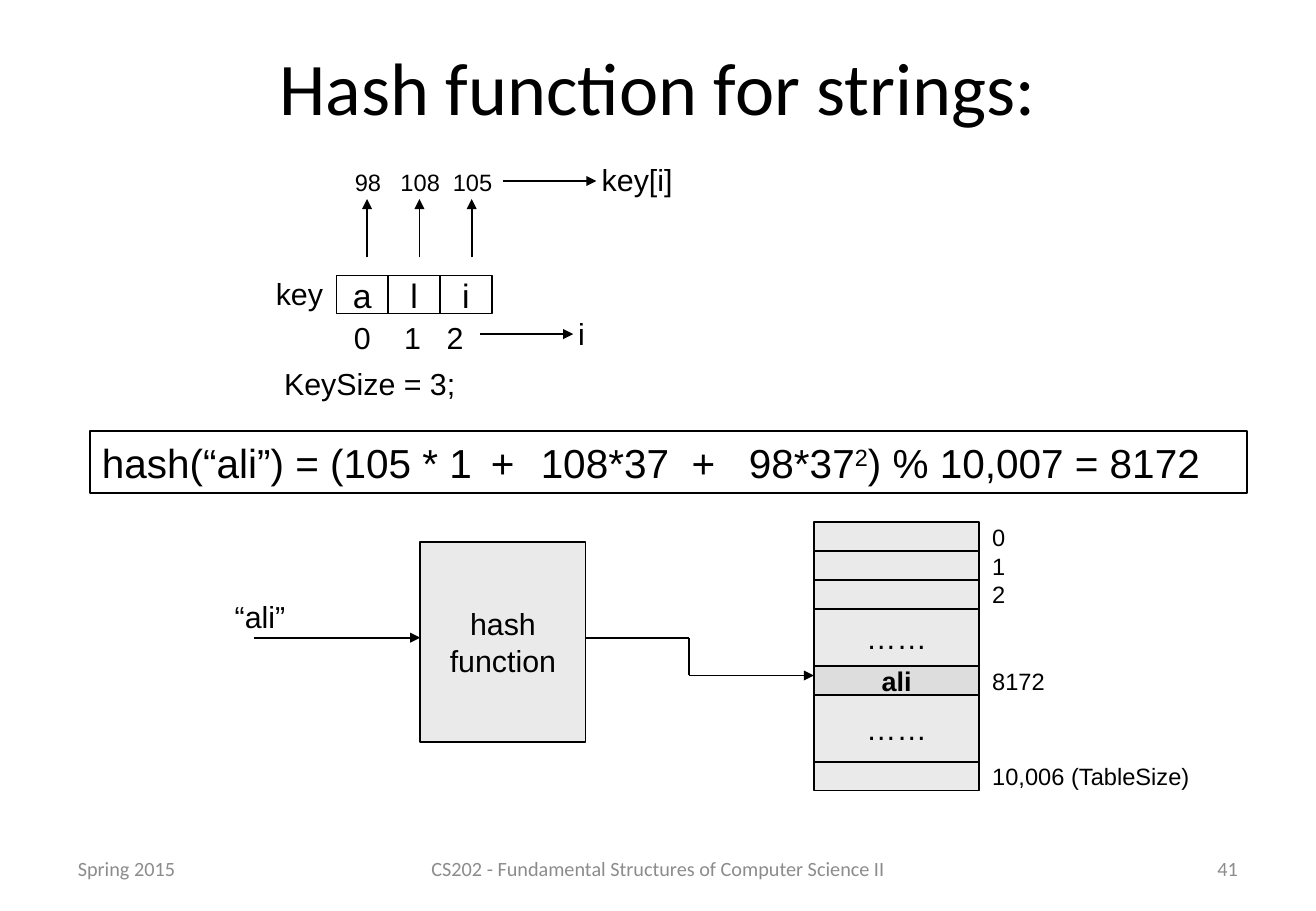
from lxml import etree
from pptx import Presentation
from pptx.dml.color import RGBColor
from pptx.enum.shapes import MSO_CONNECTOR, MSO_SHAPE
from pptx.enum.text import MSO_ANCHOR, PP_ALIGN
from pptx.oxml.ns import qn
from pptx.util import Pt

COLORS = {"ink": "000000", "muted": "8C8C8C", "cell": "EAEAEA", "match": "DDDDDD"}


class SlideBuilder:
    def __init__(self, slide, body_font="Arial", heading_font="Calibri"):
        self.slide = slide
        self.body_font = body_font
        self.heading_font = heading_font

    def color(self, name):
        return RGBColor.from_string(COLORS[name])

    def style_text(self, shape, size, font=None, color="ink", align=PP_ALIGN.CENTER,
                   bold=False, wrap=False):
        frame = shape.text_frame
        frame.word_wrap = wrap
        frame.vertical_anchor = MSO_ANCHOR.MIDDLE
        for paragraph in frame.paragraphs:
            paragraph.alignment = align
            for run in paragraph.runs:
                run.font.name = font or self.body_font
                run.font.size = Pt(size)
                run.font.bold = bold
                run.font.color.rgb = self.color(color)

    def title(self, text, left, top, width, height):
        shape = self.slide.shapes.title
        shape.left, shape.top, shape.width, shape.height = map(Pt, (left, top, width, height))
        shape.text_frame.text = text
        self.style_text(shape, 44, self.heading_font, wrap=True)

    def label(self, text, left, top, width, height, size=18, **style):
        shape = self.slide.shapes.add_textbox(*map(Pt, (left, top, width, height)))
        shape.text_frame.text = text
        self.style_text(shape, size, **style)

    def footer(self, text, left, width, align):
        self.label(text, left, 500.4, width, 28.8, 12, font=self.heading_font,
                   color="muted", align=align, wrap=True)

    def box(self, text, left, top, width, height, size=18, fill=None, **style):
        shape = self.slide.shapes.add_shape(
            MSO_SHAPE.RECTANGLE, *map(Pt, (left, top, width, height)))
        shape.shadow.inherit = False
        if fill:
            shape.fill.solid()
            shape.fill.fore_color.rgb = self.color(fill)
        else:
            shape.fill.background()
        shape.line.color.rgb = self.color("ink")
        shape.line.width = Pt(1)
        shape.text_frame.text = text
        self.style_text(shape, size, **style)
        return shape

    def formula(self, parts, left, top, width, height):
        shape = self.box("", left, top, width, height)
        paragraph = shape.text_frame.paragraphs[0]
        for text, attributes in parts:
            run = paragraph.add_run()
            run.text = text
            for name, value in attributes.items():
                run.font._element.set(name, value)
        self.style_text(shape, 24, align=PP_ALIGN.LEFT)

    def line(self, start, end, arrow=True):
        connector = self.slide.shapes.add_connector(
            MSO_CONNECTOR.STRAIGHT, *map(Pt, (*start, *end)))
        connector.line.color.rgb = self.color("ink")
        connector.line.width = Pt(1)
        if arrow:
            outline = connector.line._get_or_add_ln()
            etree.SubElement(outline, qn("a:tailEnd"), type="triangle")
        etree.SubElement(connector._element.spPr, qn("a:effectLst"))


def draw_key(builder):
    letters = [("a", "98", 214.7), ("l", "108", 244.5), ("i", "105", 269.8)]
    for index, (letter, code, index_center) in enumerate(letters):
        center = 217.6 + 31 * index
        builder.box(letter, 199.4 + 30.7 * index, 163.4, 30.7, 22.5, 20)
        builder.line((center, 152.6), (center, 118))
        builder.label(code, center - 22, 95.7, 45, 24.5, 14)
        builder.label(str(index), index_center - 13, 185, 26, 29.5)
    builder.label("key", 156.2, 159.1, 42.5, 29.5)
    builder.label("KeySize = 3;", 161.3, 212.4, 121.7, 29.5, align=PP_ALIGN.LEFT)
    builder.line((284.4, 198), (339.8, 198))
    builder.label("i", 335.5, 182.9, 18, 29.5)
    builder.line((298, 107.3), (353.5, 107.3))
    builder.label("key[i]", 349.2, 91.4, 56.9, 29.5)


def draw_hash_table(builder):
    left, top, width, row_height = 482.4, 309.6, 98, 17.1
    rows = [
        ("", "0", row_height),
        ("", "1", row_height),
        ("", "2", row_height),
        ("……", "", 34),
        ("ali", "8172", row_height),
        ("……", "", 39.6),
        ("", "10,006 (TableSize)", row_height),
    ]
    for text, position, height in rows:
        match = text == "ali"
        builder.box(text, left, top, width, height, 16 if match else 18,
                    "match" if match else "cell", bold=match)
        if position:
            builder.label(position, left + width + 0.6, top + height / 2 - 12.25,
                          132, 24.5, 14, align=PP_ALIGN.LEFT)
        top += height


def main():
    presentation = Presentation()
    presentation.slide_width = Pt(780)
    presentation.slide_height = Pt(540)
    slide = presentation.slides.add_slide(presentation.slide_layouts[5])
    builder = SlideBuilder(slide)

    builder.title("Hash function for strings:", 39, 18, 702, 66)
    draw_key(builder)
    builder.formula([
        ("hash(“ali”) = (105 * 1", {}),
        (" + ", {"spc": "445"}),
        ("108*37", {}),
        (" + ", {"spc": "667"}),
        ("98*37", {}),
        ("2", {"baseline": "30000"}),
        (") % 10,007 = 8172", {}),
    ], 53.3, 255.6, 686, 36.7)

    builder.label("“ali”", 131.8, 350.6, 44.6, 29.5)
    builder.box("hash\vfunction", 249.1, 321.1, 98, 118.8, fill="cell")
    draw_hash_table(builder)
    builder.line((150.5, 378), (249.1, 378))
    bend = 408.4
    builder.line((347.1, 378), (bend, 378), arrow=False)
    builder.line((bend, 378), (bend, 400.4), arrow=False)
    builder.line((bend, 400.4), (482.4, 400.4))

    builder.footer("Spring 2015", 39, 182, PP_ALIGN.LEFT)
    builder.footer("CS202 - Fundamental Structures of Computer Science II",
                   246.2, 288, PP_ALIGN.CENTER)
    builder.footer("41", 558.7, 182, PP_ALIGN.RIGHT)
    presentation.save("out.pptx")


if __name__ == "__main__":
    main()
